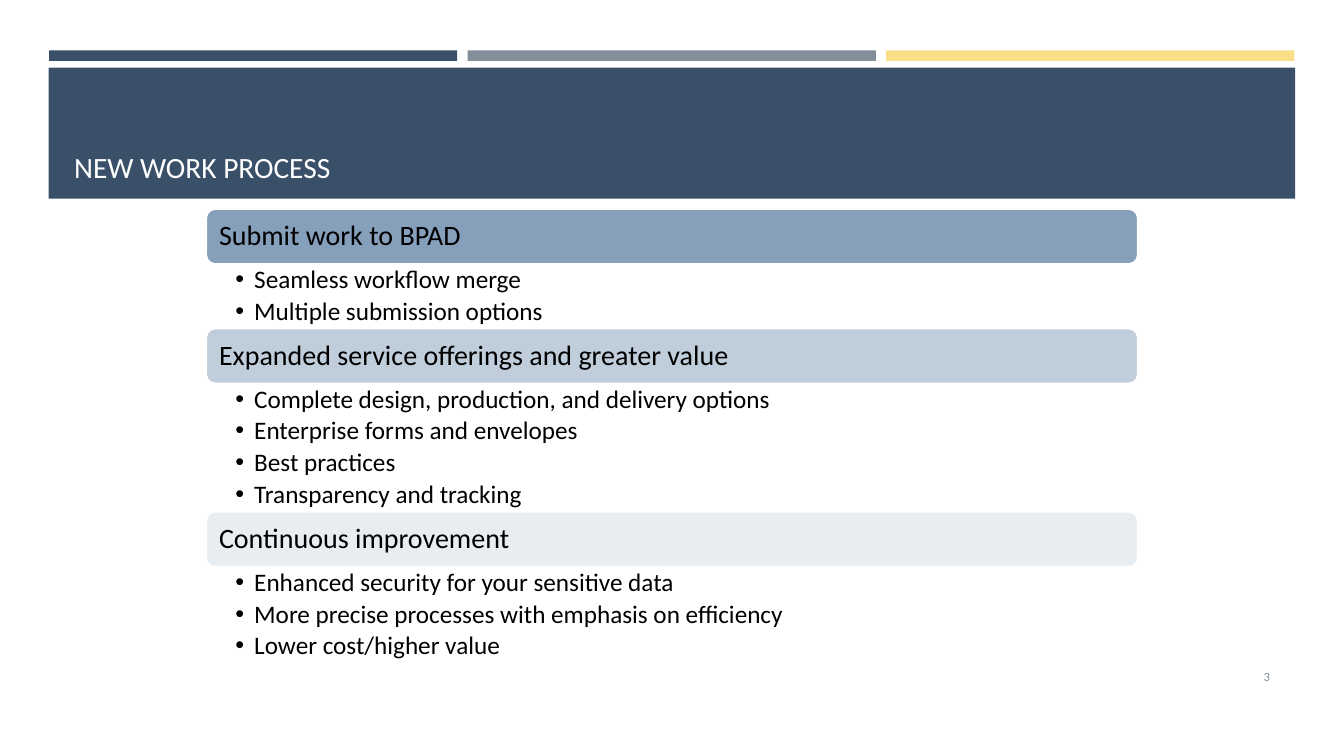
from dataclasses import dataclass

import pptx
import pptx.dml.color
import pptx.enum.shapes
import pptx.enum.text
import pptx.oxml.ns
import pptx.util
from lxml import etree

Pt = pptx.util.Pt
SHAPE = pptx.enum.shapes.MSO_SHAPE
ANCHOR = pptx.enum.text.MSO_ANCHOR
ALIGN = pptx.enum.text.PP_ALIGN
qn = pptx.oxml.ns.qn

FONT = "Calibri"
NAVY, GREY, YELLOW = "3A5068", "848D9A", "F8DF88"
WHITE, BLACK = "FFFFFF", "000000"

LEFT, TOP, WIDTH = 147, 149.1, 666
HEADING_H, BULLET_H = 39.7, 22.8


@dataclass
class Box:
    x: float
    y: float
    w: float
    h: float


@dataclass
class Section:
    heading: str
    fill: str
    opacity: int
    bullets: list[str]


SECTIONS = [
    Section("Submit work to BPAD", "7995B4", 90,
            ["Seamless workflow merge", "Multiple submission options"]),
    Section("Expanded service offerings and greater value", "A6B9CD", 70,
            ["Complete design, production, and delivery options",
             "Enterprise forms and envelopes", "Best practices",
             "Transparency and tracking"]),
    Section("Continuous improvement", "D2DCE6", 50,
            ["Enhanced security for your sensitive data",
             "More precise processes with emphasis on efficiency",
             "Lower cost/higher value"]),
]


def color(hex_code: str):
    return pptx.dml.color.RGBColor.from_string(hex_code)


def add_block(s, kind, box: Box, fill: str):
    sp = s.shapes.add_shape(kind, Pt(box.x), Pt(box.y), Pt(box.w), Pt(box.h))
    sp.shadow.inherit = False
    sp.fill.solid()
    sp.fill.fore_color.rgb = color(fill)
    sp.line.fill.background()
    return sp


def add_text_box(s, box: Box):
    return s.shapes.add_textbox(Pt(box.x), Pt(box.y), Pt(box.w), Pt(box.h))


def set_frame(sp, anchor, left=7.2, top=3.6, right=7.2, bottom=3.6):
    tf = sp.text_frame
    tf.word_wrap = True
    tf.vertical_anchor = anchor
    tf.margin_left, tf.margin_right = Pt(left), Pt(right)
    tf.margin_top, tf.margin_bottom = Pt(top), Pt(bottom)
    return tf


def add_run(p, text: str, size: float, hex_code: str, align=ALIGN.LEFT) -> None:
    p.alignment = align
    r = p.add_run()
    r.text = text
    r.font.name = FONT
    r.font.size = Pt(size)
    r.font.color.rgb = color(hex_code)


def add_bullet(p) -> None:
    pPr = p._p.get_or_add_pPr()
    pPr.set("marL", str(Pt(13.5)))
    pPr.set("indent", str(-Pt(13.5)))
    etree.SubElement(pPr, qn("a:buFont")).set("typeface", "Arial")
    etree.SubElement(pPr, qn("a:buChar")).set("char", "•")


def add_heading(s, section: Section, y: float) -> None:
    sp = add_block(s, SHAPE.ROUNDED_RECTANGLE,
                   Box(LEFT, y, WIDTH, HEADING_H), section.fill)
    clr = sp._element.spPr.find(qn("a:solidFill"))[0]
    etree.SubElement(clr, qn("a:alpha")).set("val", str(section.opacity * 1000))
    sp.line.color.rgb = color(WHITE)
    sp.line.width = Pt(1.75)
    tf = set_frame(sp, ANCHOR.MIDDLE, 7.5, 7.5, 7.5, 7.5)
    p = tf.paragraphs[0]
    p.line_spacing = 0.9
    add_run(p, section.heading, 20, BLACK)


def add_bullets(s, bullets: list[str], y: float) -> None:
    sp = add_text_box(s, Box(LEFT, y, WIDTH, BULLET_H * len(bullets)))
    tf = set_frame(sp, ANCHOR.TOP, 21.1, 2, 13.5, 2)
    for i, text in enumerate(bullets):
        p = tf.add_paragraph() if i else tf.paragraphs[0]
        add_bullet(p)
        p.line_spacing = 0.9
        p.space_after = Pt(3.1)
        add_run(p, text, 18, BLACK)


def main() -> None:
    prs = pptx.Presentation()
    prs.slide_width, prs.slide_height = Pt(960), Pt(540)
    s = prs.slides.add_slide(prs.slide_layouts[6])

    # Top stripes and title band
    for i, fill in enumerate((NAVY, GREY, YELLOW)):
        add_block(s, SHAPE.RECTANGLE, Box(35 + 299 * i, 36, 291.6, 7.5), fill)
    add_block(s, SHAPE.RECTANGLE, Box(34.8, 48.4, 890.4, 93.6), NAVY)

    # Title
    tf = set_frame(add_text_box(s, Box(45.8, 55.3, 868.4, 80)), ANCHOR.BOTTOM)
    add_run(tf.paragraphs[0], "NEW WORK PROCESS", 21, WHITE)

    # Sections stacked without gaps
    y = TOP
    for section in SECTIONS:
        add_heading(s, section, y)
        add_bullets(s, section.bullets, y + HEADING_H)
        y += HEADING_H + BULLET_H * len(section.bullets)

    # Slide number
    tf = set_frame(add_text_box(s, Box(831.6, 469, 82.6, 28.8)), ANCHOR.MIDDLE)
    add_run(tf.paragraphs[0], "3", 9, GREY, ALIGN.RIGHT)

    prs.save("out.pptx")


if __name__ == "__main__":
    main()
